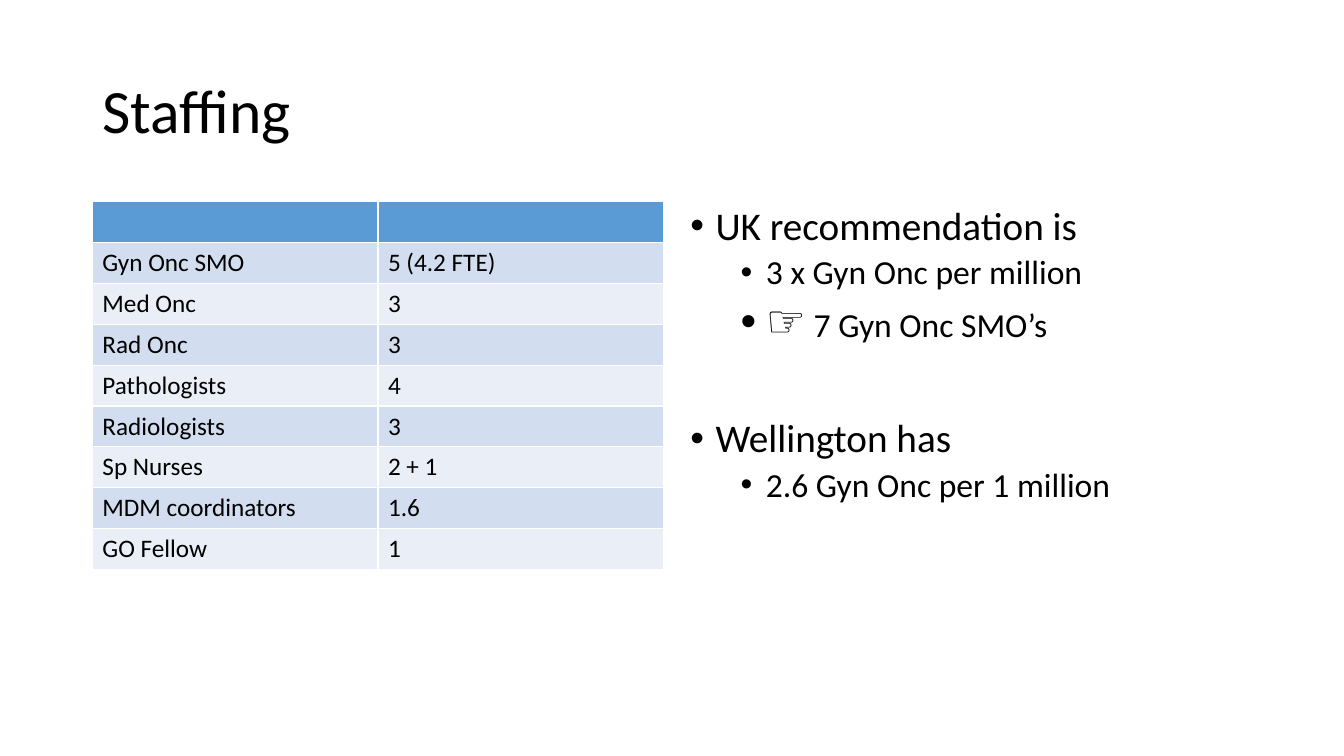
from lxml import etree
from pptx import Presentation
from pptx.dml.color import RGBColor
from pptx.enum import text
from pptx.oxml.ns import qn
from pptx.util import Pt

FONT = "Calibri"
BLACK = RGBColor(0x00, 0x00, 0x00)
HEADER_BLUE = RGBColor(0x5B, 0x9B, 0xD5)
BAND_DARK = RGBColor(0xD2, 0xDE, 0xEF)
BAND_LIGHT = RGBColor(0xEA, 0xEF, 0xF7)

LEFT, TOP = Pt(66), Pt(144)
COLUMN_WIDTH, ROW_HEIGHT = Pt(204), Pt(29.2)

STAFF = [
    ("", ""),
    ("Gyn Onc SMO", "5 (4.2 FTE)"),
    ("Med Onc", "3"),
    ("Rad Onc", "3"),
    ("Pathologists", "4"),
    ("Radiologists", "3"),
    ("Sp Nurses", "2 + 1"),
    ("MDM coordinators", "1.6"),
    ("GO Fellow", "1"),
]

# Level, space before in points, and runs of (wording, size)
POINTS = [
    (0, 10, [("UK recommendation is", 28)]),
    (1, 5, [("3 x Gyn Onc per million", 24)]),
    (1, 5, [("☞", 32), (" 7 Gyn Onc SMO’s", 24)]),
    (0, 51, [("Wellington has", 28)]),
    (1, 5, [("2.6 Gyn Onc per 1 million", 24)]),
]


def style_font(font, size):
    font.name = FONT
    font.size = Pt(size)
    font.color.rgb = BLACK


def place_title(slide, wording):
    title = slide.shapes.title
    title.left, title.top, title.width, title.height = LEFT, Pt(28.8), Pt(828), Pt(104.4)
    frame = title.text_frame
    frame.text = wording
    frame.auto_size = text.MSO_AUTO_SIZE.NONE
    frame.vertical_anchor = text.MSO_ANCHOR.MIDDLE
    heading = frame.paragraphs[0]
    heading.alignment = text.PP_ALIGN.LEFT
    heading.line_spacing = 0.9
    style_font(heading.runs[0].font, 44)


def add_staff_table(slide):
    """Header row above alternating bands; white rules come from the table style."""
    staff = slide.shapes.add_table(
        len(STAFF), 2, LEFT, TOP, 2 * COLUMN_WIDTH, len(STAFF) * ROW_HEIGHT
    ).table
    for column in staff.columns:
        column.width = COLUMN_WIDTH
    for index, entries in enumerate(STAFF):
        staff.rows[index].height = ROW_HEIGHT
        band = BAND_DARK if index % 2 else BAND_LIGHT
        for cell, entry in zip(staff.rows[index].cells, entries):
            cell.fill.solid()
            cell.fill.fore_color.rgb = band if index else HEADER_BLUE
            cell.text = entry
            style_font(cell.text_frame.paragraphs[0].font, 18)


def set_bullet(paragraph, level):
    properties = paragraph._p.get_or_add_pPr()
    properties.set("marL", str(Pt(18 + 36 * level)))
    properties.set("indent", str(Pt(-18)))
    etree.SubElement(properties, qn("a:buFont")).set("typeface", "Arial")
    etree.SubElement(properties, qn("a:buChar")).set("char", "•")


def add_points(slide):
    frame = slide.shapes.add_textbox(Pt(486), TOP, Pt(408), Pt(342.7)).text_frame
    frame.word_wrap = True
    for index, (level, space_before, runs) in enumerate(POINTS):
        paragraph = frame.add_paragraph() if index else frame.paragraphs[0]
        paragraph.level = level
        paragraph.line_spacing = 0.9
        paragraph.space_before = Pt(space_before)
        set_bullet(paragraph, level)
        for wording, size in runs:
            run = paragraph.add_run()
            run.text = wording
            style_font(run.font, size)


def main():
    deck = Presentation()
    deck.slide_width, deck.slide_height = Pt(960), Pt(540)
    slide = deck.slides.add_slide(deck.slide_layouts[5])
    place_title(slide, "Staffing")
    add_staff_table(slide)
    add_points(slide)
    deck.save("out.pptx")


if __name__ == "__main__":
    main()
